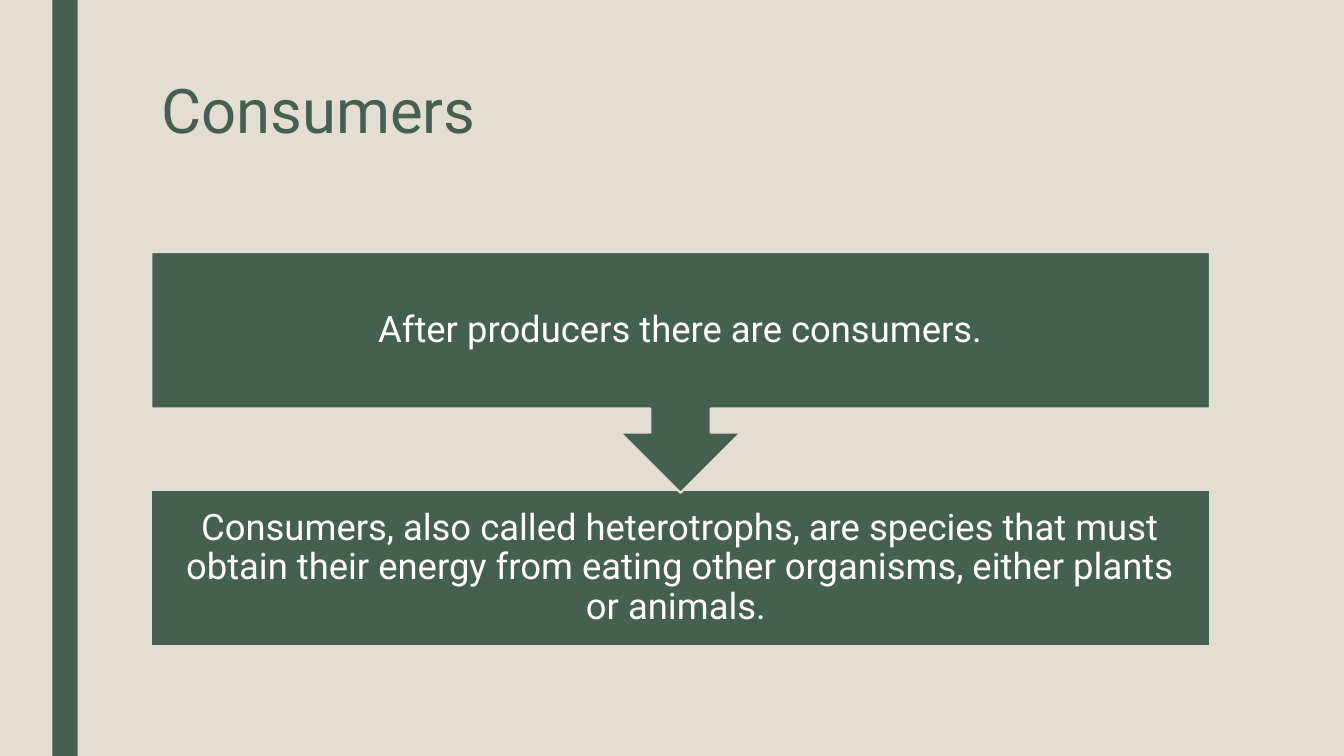
from pptx import Presentation
from pptx.dml.color import RGBColor
from pptx.enum.shapes import MSO_SHAPE
from pptx.enum.text import MSO_ANCHOR, PP_ALIGN
from pptx.util import Inches, Pt

TITLE = "Consumers"
DEFINITION = (
    "Consumers, also called heterotrophs, are species that must obtain "
    "their energy from eating other organisms, either plants or animals. "
)
INTRODUCTION = "After producers there are consumers."
COLORS = {"sand": "E3DED1", "green": "455F51", "white": "FFFFFF"}
FONT = "Roboto"

LEFT, WIDTH = 1.5, 10.5
STEPS = [
    (MSO_SHAPE.RECTANGLE, 4.86, 1.55, DEFINITION),
    (MSO_SHAPE.DOWN_ARROW_CALLOUT, 2.5, 2.39, INTRODUCTION),
]


def color(name):
    return RGBColor.from_string(COLORS[name])


def add_block(page, kind, left, top, width, height):
    block = page.shapes.add_shape(
        kind, Inches(left), Inches(top), Inches(width), Inches(height)
    )
    block.shadow.inherit = False
    block.fill.solid()
    block.fill.fore_color.rgb = color("green")
    block.line.fill.background()
    return block


def write(frame, text, size, color_name, align, spacing):
    frame.word_wrap = True
    para = frame.paragraphs[0]
    para.alignment = align
    para.line_spacing = spacing
    span = para.add_run()
    span.text = text
    span.font.name = FONT
    span.font.size = Pt(size)
    span.font.color.rgb = color(color_name)


def add_step(page, kind, top, height, text):
    step = add_block(page, kind, LEFT, top, WIDTH, height)
    step.line.color.rgb = color("sand")
    step.line.width = Pt(1.5)
    frame = step.text_frame
    frame.margin_left = frame.margin_right = Inches(0.2)
    frame.margin_top = frame.margin_bottom = Inches(0.2)
    frame.vertical_anchor = MSO_ANCHOR.MIDDLE
    write(frame, text, 26, "white", PP_ALIGN.CENTER, 0.9)


def main():
    deck = Presentation()
    deck.slide_width, deck.slide_height = Inches(13.33), Inches(7.5)
    page = deck.slides.add_slide(deck.slide_layouts[5])
    page.background.fill.solid()
    page.background.fill.fore_color.rgb = color("sand")

    add_block(page, MSO_SHAPE.RECTANGLE, 0.52, 0, 0.25, 7.5)

    title = page.shapes.title
    title.left, title.top = Inches(LEFT), Inches(0.75)
    title.width, title.height = Inches(WIDTH), Inches(1.62)
    title.text_frame.vertical_anchor = MSO_ANCHOR.TOP
    write(title.text_frame, TITLE, 44, "green", PP_ALIGN.LEFT, 0.89)

    for step in STEPS:
        add_step(page, *step)

    deck.save("out.pptx")


if __name__ == "__main__":
    main()
